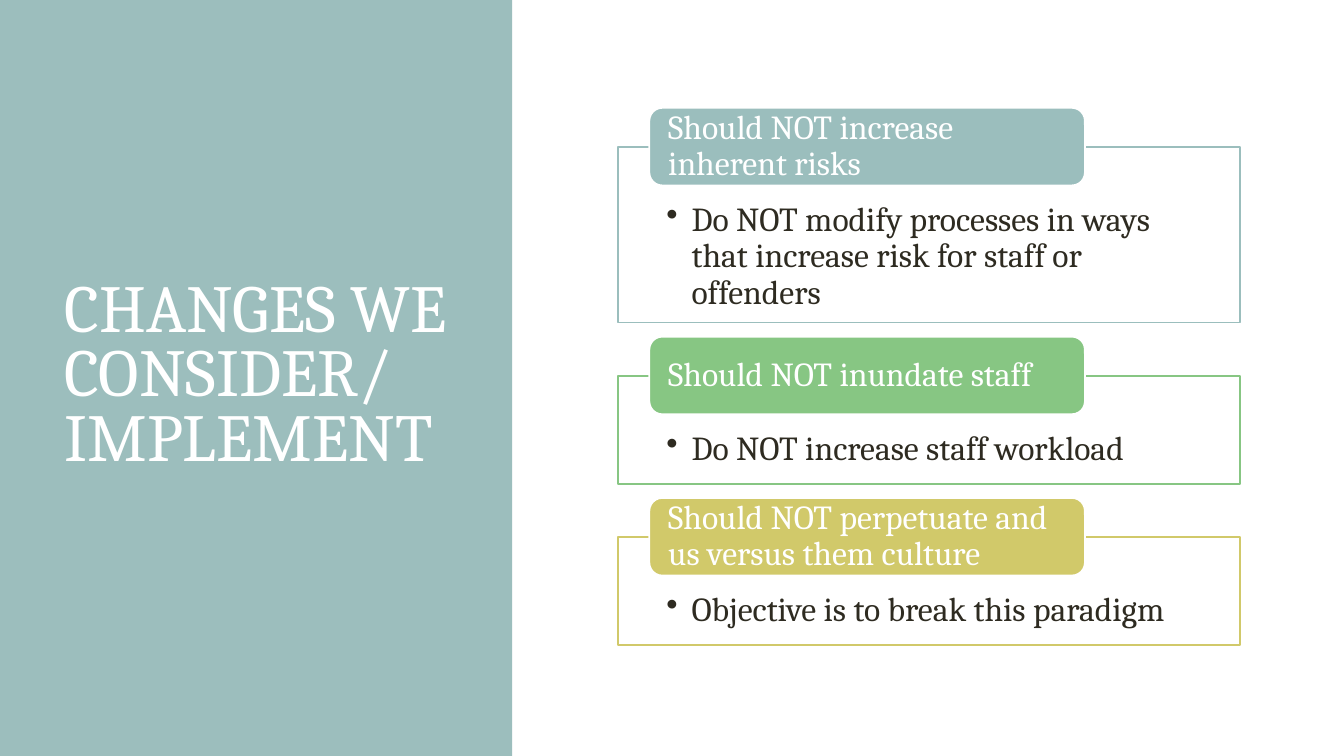
from dataclasses import dataclass

from lxml import etree
from pptx import Presentation
from pptx.dml.color import RGBColor
from pptx.enum.shapes import MSO_SHAPE
from pptx.enum.text import MSO_ANCHOR, PP_ALIGN
from pptx.oxml.ns import qn
from pptx.shapes.autoshape import Shape
from pptx.slide import Slide
from pptx.util import Pt

RECT, ROUND = MSO_SHAPE.RECTANGLE, MSO_SHAPE.ROUNDED_RECTANGLE
TOP, MIDDLE = MSO_ANCHOR.TOP, MSO_ANCHOR.MIDDLE
LEFT = PP_ALIGN.LEFT
SCALE = 9144


@dataclass(frozen=True)
class Theme:
    font: str = "Cambria"
    white: str = "FFFFFF"
    ink: str = "2E2B21"
    panel: str = "9CBEBD"
    teal: str = "9BBEBD"
    green: str = "87C683"
    gold: str = "D1C96A"
    title: int = 48
    body: int = 24
    line: float = 1.25


@dataclass(frozen=True)
class Box:
    left: int
    top: int
    width: int
    height: int


@dataclass(frozen=True)
class Card:
    head: str
    point: str
    color: str
    height: int


THEME = Theme()
FIRST, GAP = 146, 53
CARDS = (
    Card("Should NOT increase inherent risks",
         "Do NOT modify processes in ways that increase risk for staff or offenders",
         THEME.teal, 174),
    Card("Should NOT inundate staff", "Do NOT increase staff workload",
         THEME.green, 107),
    Card("Should NOT perpetuate and us versus them culture",
         "Objective is to break this paradigm", THEME.gold, 107),
)


def px(size: int) -> int:
    return size * SCALE


def rgb(color: str) -> RGBColor:
    return RGBColor.from_string(color)


def add_box(slide: Slide, kind: MSO_SHAPE, box: Box, fill: str,
            line: str | None = None) -> Shape:
    shape = slide.shapes.add_shape(
        kind, px(box.left), px(box.top), px(box.width), px(box.height))
    shape.shadow.inherit = False
    shape.fill.solid()
    shape.fill.fore_color.rgb = rgb(fill)
    if line:
        shape.line.color.rgb = rgb(line)
        shape.line.width = Pt(THEME.line)
    else:
        shape.line.fill.background()
    return shape


def set_text(shape: Shape, lines: tuple[str, ...], size: int, color: str,
             space: float, anchor: MSO_ANCHOR,
             inset: tuple[int, int, int, int], bullet: bool = False) -> None:
    frame = shape.text_frame
    frame.word_wrap = True
    frame.vertical_anchor = anchor
    (frame.margin_left, frame.margin_top,
     frame.margin_right, frame.margin_bottom) = map(px, inset)
    para = frame.paragraphs[0]
    para.alignment = LEFT
    para.line_spacing = space
    for index, text in enumerate(lines):
        if index:
            para.add_line_break()
        para.add_run().text = text
    if bullet:
        props = para._p.get_or_add_pPr()
        props.set("marL", str(px(25)))
        props.set("indent", str(px(-25)))
        etree.SubElement(props, qn("a:buChar")).set("char", "•")
    para.font.name = THEME.font
    para.font.size = Pt(size)
    para.font.color.rgb = rgb(color)


def add_title(slide: Slide) -> None:
    add_box(slide, RECT, Box(0, 0, 508, 750), THEME.panel)
    title = slide.shapes.add_textbox(px(54), px(70), px(419), px(609))
    set_text(title, ("CHANGES WE CONSIDER/", "IMPLEMENT"), THEME.title,
             THEME.white, 0.8, MIDDLE, (10, 5, 10, 5))


def add_card(slide: Slide, card: Card, top: int) -> None:
    body = add_box(slide, RECT, Box(613, top, 617, card.height),
                   THEME.white, card.color)
    shade = body.fill._xPr.find(qn("a:solidFill"))[0]
    etree.SubElement(shade, qn("a:alpha")).set("val", "89000")
    set_text(body, (card.point,), THEME.body, THEME.ink, 0.9, TOP,
             (48, 55, 48, 19), bullet=True)
    head = add_box(slide, ROUND, Box(644, top - 39, 432, 77),
                   card.color, THEME.white)
    set_text(head, (card.head,), THEME.body, THEME.white, 0.9, MIDDLE,
             (15, 0, 15, 0))


def main() -> None:
    deck = Presentation()
    deck.slide_width, deck.slide_height = px(1333), px(750)
    slide = deck.slides.add_slide(deck.slide_layouts[6])
    add_title(slide)
    top = FIRST
    for card in CARDS:
        add_card(slide, card, top)
        top += card.height + GAP
    deck.save("out.pptx")


if __name__ == "__main__":
    main()
